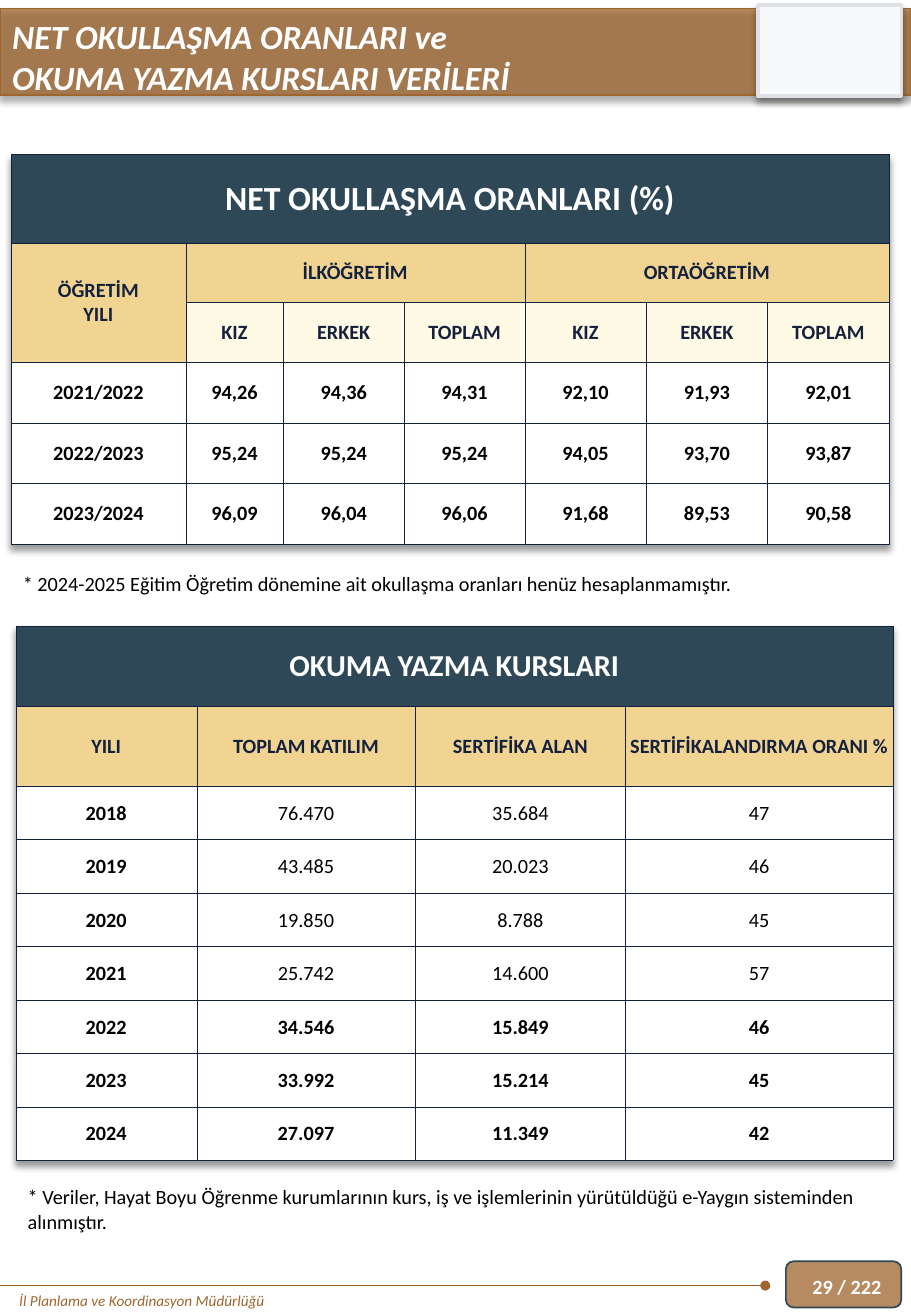
from dataclasses import dataclass

from lxml import etree
from pptx import Presentation
from pptx.dml.color import RGBColor as RGB
from pptx.enum.shapes import MSO_CONNECTOR as CONN, MSO_SHAPE as SHAPE
from pptx.enum.text import MSO_ANCHOR as ANCHOR, MSO_AUTO_SIZE as FIT, PP_ALIGN as ALIGN
from pptx.oxml import parse_xml
from pptx.oxml.ns import nsdecls, qn
from pptx.util import Inches, Pt

# Content
TITLE = "NET OKULLAŞMA ORANLARI ve\nOKUMA YAZMA KURSLARI VERİLERİ"
DEPARTMENT = "İl Planlama ve Koordinasyon Müdürlüğü"
PAGE = "29 / 222"
RATES_NOTE = "* 2024-2025 Eğitim Öğretim dönemine ait okullaşma oranları henüz hesaplanmamıştır."
COURSES_NOTE = ("* Veriler, Hayat Boyu Öğrenme kurumlarının kurs, iş ve işlemlerinin "
                "yürütüldüğü e-Yaygın sisteminden alınmıştır.")
RATES = [
    ["NET OKULLAŞMA ORANLARI (%)"],
    ["ÖĞRETİM\nYILI", "İLKÖĞRETİM", "", "", "ORTAÖĞRETİM"],
    ["", "KIZ", "ERKEK", "TOPLAM", "KIZ", "ERKEK", "TOPLAM"],
    ["2021/2022", "94,26", "94,36", "94,31", "92,10", "91,93", "92,01"],
    ["2022/2023", "95,24", "95,24", "95,24", "94,05", "93,70", "93,87"],
    ["2023/2024", "96,09", "96,04", "96,06", "91,68", "89,53", "90,58"],
]
COURSES = [
    ["OKUMA YAZMA KURSLARI"],
    ["YILI", "TOPLAM KATILIM", "SERTİFİKA ALAN", "SERTİFİKALANDIRMA ORANI %"],
    ["2018", "76.470", "35.684", "47"],
    ["2019", "43.485", "20.023", "46"],
    ["2020", "19.850", "8.788", "45"],
    ["2021", "25.742", "14.600", "57"],
    ["2022", "34.546", "15.849", "46"],
    ["2023", "33.992", "15.214", "45"],
    ["2024", "27.097", "11.349", "42"],
]


@dataclass(frozen=True)
class Theme:
    font: str = "Calibri"
    brown: str = "9E652E"
    navy: str = "2F4858"
    ink: str = "14213D"
    gold: str = "F2D492"
    cream: str = "FFFAE5"
    white: str = "FFFFFF"
    black: str = "000000"
    panel: str = "F8F9FA"
    panel_line: str = "DEE2E6"
    heading: int = 20
    subheading: int = 18
    body: int = 12
    footer: int = 9


T = Theme()
SHADOW = (f'<a:effectLst {nsdecls("a")}><a:outerShdw blurRad="{Pt(4)}" dist="{Pt(3)}" '
          f'dir="5400000" algn="t" rotWithShape="0"><a:srgbClr val="{T.black}">'
          '<a:alpha val="40000"/></a:srgbClr></a:outerShdw></a:effectLst>')


def style_text(tf, size, color, bold=False, italic=False, align=ALIGN.LEFT):
    for p in tf.paragraphs:
        p.alignment = align
        for r in p.runs:
            f = r.font
            f.name, f.size, f.bold, f.italic = T.font, Pt(size), bold, italic
            f.color.rgb = RGB.from_string(color)


def add_panel(slide, kind, box, fill, line, width, alpha=100, shadow=False):
    sp = slide.shapes.add_shape(kind, *map(Inches, box))
    sp.shadow.inherit = False
    sp.fill.solid()
    sp.fill.fore_color.rgb = RGB.from_string(fill)
    sp.line.color.rgb = RGB.from_string(line)
    sp.line.width = Pt(width)
    pr = sp.element.spPr
    if alpha < 100:
        color = pr.find(qn("a:solidFill")).find(qn("a:srgbClr"))
        etree.SubElement(color, qn("a:alpha")).set("val", str(alpha * 1000))
    if shadow:
        pr.replace(pr.find(qn("a:effectLst")), parse_xml(SHADOW))


def add_text(slide, box, text, size, color, anchor=ANCHOR.TOP, **style):
    tf = slide.shapes.add_textbox(*map(Inches, box)).text_frame
    tf.word_wrap = True
    tf.vertical_anchor = anchor
    tf.text = text
    style_text(tf, size, color, **style)


def fill_cell(cell, text, size, color, bold, fill, margins):
    cell.text = text
    cell.vertical_anchor = ANCHOR.MIDDLE
    (cell.margin_left, cell.margin_top,
     cell.margin_right, cell.margin_bottom) = map(Inches, margins)
    style_text(cell.text_frame, size, color, bold, align=ALIGN.CENTER)
    cell.fill.solid()
    cell.fill.fore_color.rgb = RGB.from_string(fill)
    pr = cell._tc.get_or_add_tcPr()
    for i, side in enumerate("LRTB"):
        pr.insert(i, parse_xml(
            f'<a:ln{side} {nsdecls("a")} w="{Pt(0.25)}"><a:solidFill>'
            f'<a:srgbClr val="{T.ink}"/></a:solidFill></a:ln{side}>'))


def add_grid(slide, left, top, cols, heights, rows, look, margins, merges=()):
    """Draw a table; look(row, col) gives size, colour, bold and fill."""
    frame = slide.shapes.add_table(len(rows), len(cols), Inches(left), Inches(top),
                                   Inches(sum(cols)), Inches(sum(heights)))
    table = frame.table
    table.first_row = table.horz_banding = False
    table._tbl.tblPr.insert(0, parse_xml(SHADOW))
    for col, width in zip(table.columns, cols):
        col.width = Inches(width)
    for row, height in zip(table.rows, heights):
        row.height = Inches(height)
    for r, row in enumerate(rows):
        for c in range(len(cols)):
            text = row[c] if c < len(row) else ""
            fill_cell(table.cell(r, c), text, *look(r, c), margins)
    for first, last in ((0, 0), (0, len(cols) - 1)), *merges:
        table.cell(*first).merge(table.cell(*last))


def rates_look(r, c):
    if r == 0:
        return T.heading, T.white, True, T.navy
    if r <= 2:
        return T.body, T.ink, True, T.cream if r == 2 and c else T.gold
    return T.body, T.black, True, T.white


def courses_look(r, c):
    if r == 0:
        return T.subheading, T.white, True, T.navy
    if r == 1:
        return T.body, T.ink, True, T.gold
    return T.body, T.black, c == 0 or COURSES[r][0] >= "2022", T.white


def main():
    prs = Presentation()
    prs.slide_width, prs.slide_height = Inches(7.5), Inches(10.83)
    slide = prs.slides.add_slide(prs.slide_layouts[5])

    # Page badge, title band and emblem panel
    add_panel(slide, SHAPE.ROUNDED_RECTANGLE, (6.47, 10.38, 0.95, 0.38),
              T.brown, T.navy, 1, alpha=75)
    add_panel(slide, SHAPE.RECTANGLE, (0, 0.07, 7.5, 0.71),
              T.brown, T.brown, 1, alpha=75, shadow=True)
    add_panel(slide, SHAPE.RECTANGLE, (6.24, 0.04, 1.18, 0.75),
              T.panel, T.panel_line, 2, shadow=True)

    # Footer rule with a dot at its right end
    rule = slide.shapes.add_connector(CONN.STRAIGHT, Inches(6.3), Inches(10.58),
                                      0, Inches(10.58))
    rule.line.color.rgb = RGB.from_string(T.brown)
    rule.line.width = Pt(0.5)
    etree.SubElement(rule.line._get_or_add_ln(), qn("a:headEnd")).set("type", "oval")
    etree.SubElement(rule.element.spPr, qn("a:effectLst"))
    add_text(slide, (0.06, 10.58, 4.69, 0.25), DEPARTMENT, T.footer, T.brown, italic=True)
    add_text(slide, (6.59, 10.38, 0.9, 0.42), PAGE, T.body, T.white,
             anchor=ANCHOR.MIDDLE, bold=True)

    # Title, brought in front of its band
    title = slide.shapes.title
    title.left, title.top, title.width, title.height = map(Inches, (0, 0.08, 7.5, 0.77))
    tf = title.text_frame
    tf.text = TITLE
    tf.vertical_anchor = ANCHOR.TOP
    tf.auto_size = FIT.NONE
    style_text(tf, T.heading, T.white, bold=True, italic=True)
    title.element.getparent().append(title.element)

    # Enrolment rates
    add_grid(slide, 0.09, 1.27, [1.44, 0.8, 1, 0.99, 1, 1, 1],
             [0.73] + [0.49] * 2 + [0.5] * 3, RATES, rates_look, (0.07, 0.04, 0.07, 0.04),
             merges=[((1, 0), (2, 0)), ((1, 1), (1, 3)), ((1, 4), (1, 6))])
    add_text(slide, (0.09, 4.65, 7.23, 0.3), RATES_NOTE, T.body, T.black)

    # Literacy courses
    add_grid(slide, 0.13, 5.15, [1.49, 1.8, 1.73, 2.2], [0.66] * 2 + [0.44] * 7,
             COURSES, courses_look, (0.01, 0.01, 0.01, 0))
    add_text(slide, (0.13, 9.7, 7.23, 0.5), COURSES_NOTE, T.body, T.black)

    prs.save("out.pptx")


if __name__ == "__main__":
    main()
